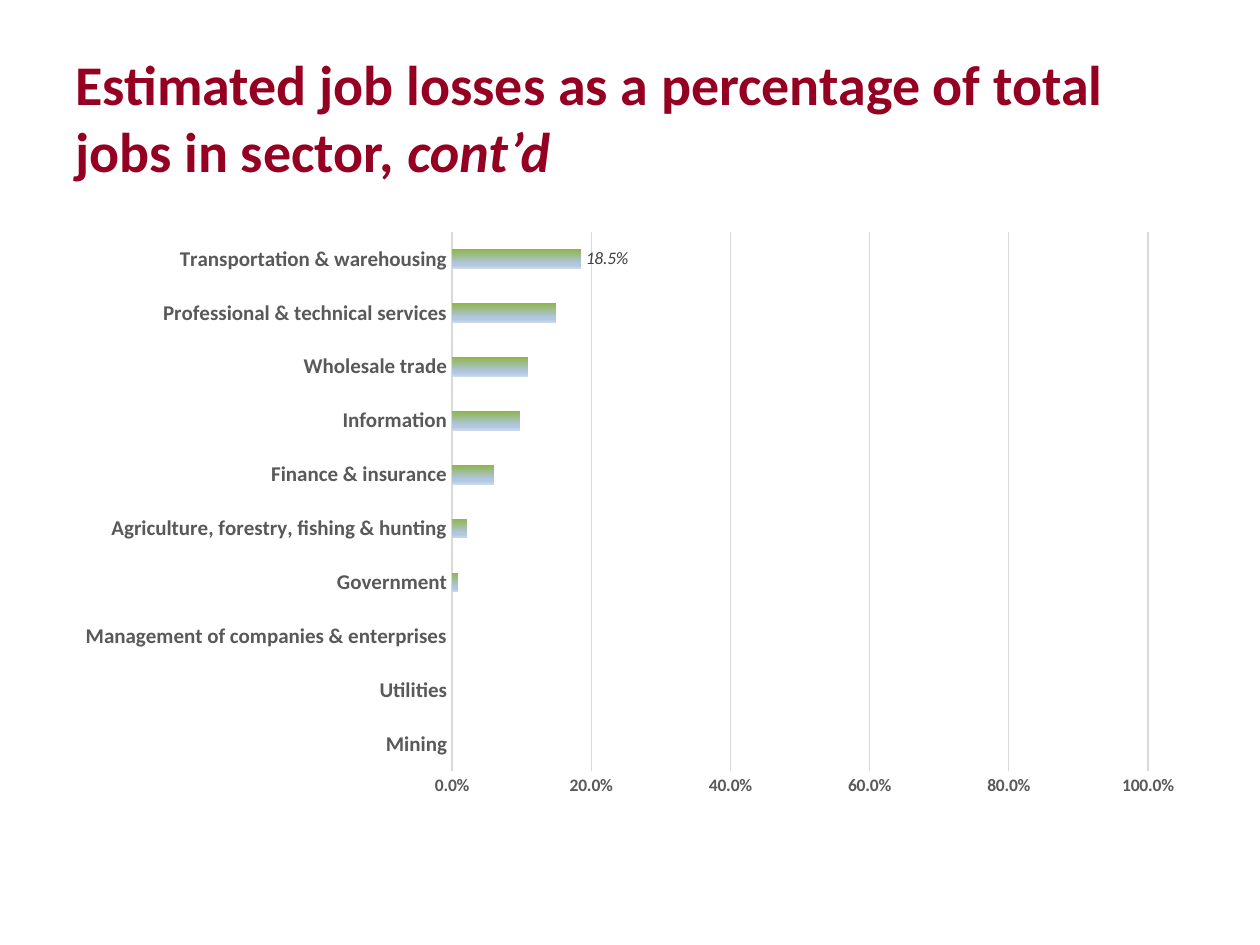
from pptx import Presentation
from pptx.chart.data import CategoryChartData
from pptx.dml.color import RGBColor
from pptx.enum.chart import XL_CHART_TYPE, XL_LABEL_POSITION, XL_TICK_MARK
from pptx.enum.text import MSO_ANCHOR
from pptx.oxml import parse_xml
from pptx.oxml.ns import nsdecls, qn
from pptx.util import Pt

FONT = "Calibri"
MAROON, GREY, DARK_GREY, GRID = "950022", "595959", "404040", "D9D9D9"
BAR_STOPS = [(0, "8FB54B"), (74, "B0C6E1"), (83, "B0C6E1"), (100, "CAD9EB")]

JOB_LOSSES = [
    ("Mining", 0),
    ("Utilities", 0),
    ("Management of companies & enterprises", 0),
    ("Government", 0.008),
    ("Agriculture, forestry, fishing & hunting", 0.022),
    ("Finance & insurance", 0.061),
    ("Information", 0.098),
    ("Wholesale trade", 0.109),
    ("Professional & technical services", 0.15),
    ("Transportation & warehousing", 0.185),
]


def rgb(color):
    return RGBColor.from_string(color)


def set_font(font, size, color, bold=False, italic=False):
    font.name, font.size = FONT, Pt(size)
    font.bold, font.italic = bold, italic
    font.color.rgb = rgb(color)


def set_line(line, color):
    line.color.rgb = rgb(color)
    line.width = Pt(0.75)


def add_title(slide, x, y, w, h):
    tf = slide.shapes.add_textbox(Pt(x), Pt(y), Pt(w), Pt(h)).text_frame
    tf.word_wrap = True
    tf.vertical_anchor = MSO_ANCHOR.MIDDLE
    p = tf.paragraphs[0]
    for text, italic in [
        ("Estimated job losses as a percentage of total jobs in sector, ", False),
        ("cont’d", True),
    ]:
        r = p.add_run()
        r.text = text
        set_font(r.font, 32, MAROON, bold=True, italic=italic)


def fill_bars(series):
    """Give the bars a vertical gradient with all of BAR_STOPS."""
    fill = series.format.fill
    fill.gradient()
    fill.gradient_angle = 270
    stops = next(series._element.iter(qn("a:gsLst")))
    for stop in list(stops):
        stops.remove(stop)
    for percent, color in BAR_STOPS:
        stops.append(parse_xml(
            f'<a:gs {nsdecls("a")} pos="{percent * 1000}">'
            f'<a:srgbClr val="{color}"/></a:gs>'))


def place_plot(chart, x, y, w, h):
    """Fix the inner plot area, given as fractions of the chart."""
    plot_area = chart._chartSpace.chart.plotArea
    for old in plot_area.findall(qn("c:layout")):
        plot_area.remove(old)
    sizes = "".join(f'<c:{tag} val="{value:.4f}"/>'
                    for tag, value in zip("xywh", (x, y, w, h)))
    plot_area.insert(0, parse_xml(
        f'<c:layout {nsdecls("c")}><c:manualLayout>'
        '<c:layoutTarget val="inner"/><c:xMode val="edge"/><c:yMode val="edge"/>'
        f'{sizes}</c:manualLayout></c:layout>'))


def format_axes(chart):
    for axis, size in ((chart.category_axis, 12), (chart.value_axis, 10)):
        axis.major_tick_mark = axis.minor_tick_mark = XL_TICK_MARK.NONE
        set_font(axis.tick_labels.font, size, GREY, bold=True)
    set_line(chart.category_axis.format.line, GRID)

    axis = chart.value_axis
    axis.minimum_scale, axis.maximum_scale, axis.major_unit = 0, 1, 0.2
    axis.tick_labels.number_format = "0.0%"
    axis.tick_labels.number_format_is_linked = False
    axis.format.line.fill.background()
    set_line(axis.major_gridlines.format.line, GRID)


def add_loss_chart(slide, x, y, w, h):
    data = CategoryChartData(number_format="0.0%")
    data.categories = [name for name, _ in JOB_LOSSES]
    data.add_series("Series 1", [share for _, share in JOB_LOSSES])
    chart = slide.shapes.add_chart(
        XL_CHART_TYPE.BAR_CLUSTERED, Pt(x), Pt(y), Pt(w), Pt(h), data).chart
    chart.has_title = chart.has_legend = False
    set_font(chart.font, 10, "000000")
    format_axes(chart)
    place_plot(chart, 222.3 / w, 6.6 / h, 397.7 / w, 308 / h)

    plot = chart.plots[0]
    plot.gap_width = 182
    plot.vary_by_categories = False
    series = plot.series[0]
    fill_bars(series)
    series.data_labels.show_value = False
    label = series.points[len(JOB_LOSSES) - 1].data_label
    set_font(label.font, 10, DARK_GREY, italic=True)
    label.position = XL_LABEL_POSITION.OUTSIDE_END


def main():
    prs = Presentation()
    prs.slide_width, prs.slide_height = Pt(720), Pt(540)
    slide = prs.slides.add_slide(prs.slide_layouts[6])
    add_title(slide, 36, 21.6, 648, 90)
    add_loss_chart(slide, 36, 126, 648, 335.5)
    prs.save("out.pptx")


if __name__ == "__main__":
    main()
